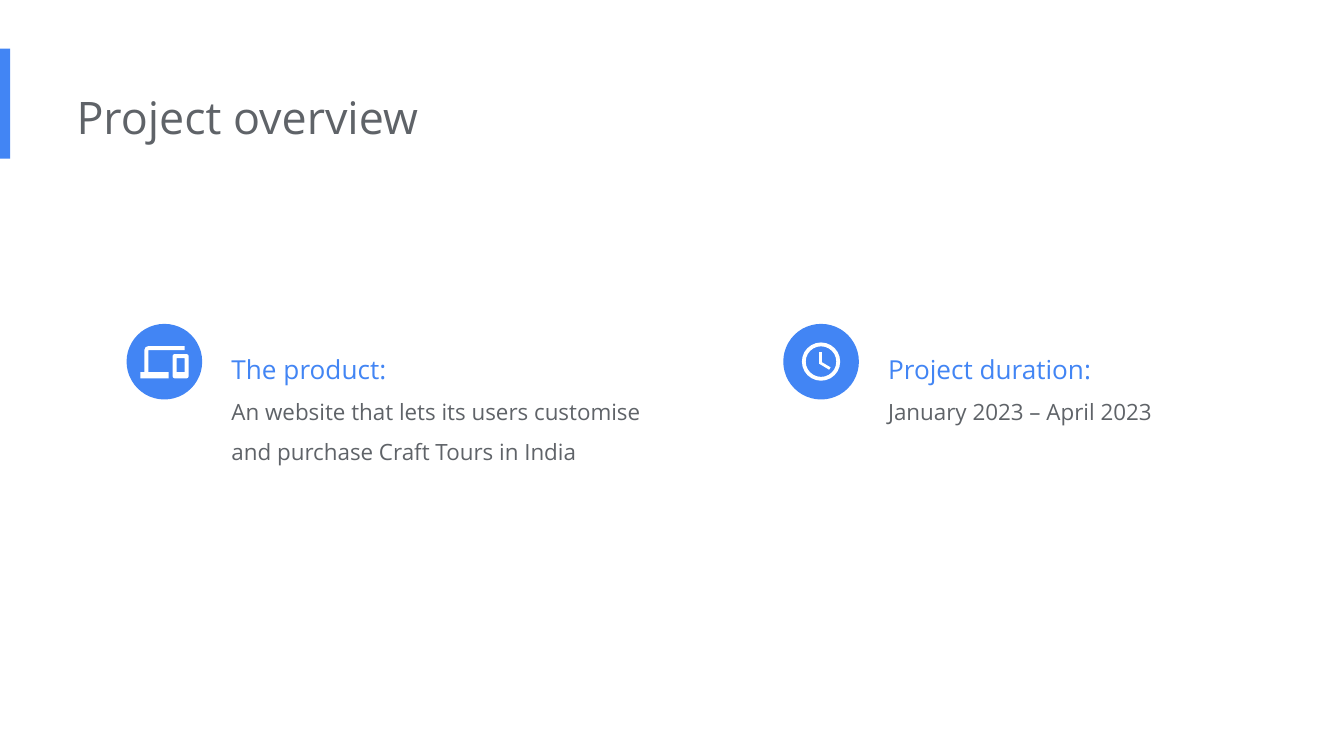
import dataclasses

import pptx
import pptx.dml.color
import pptx.enum.shapes
import pptx.enum.text
import pptx.shapes.autoshape
import pptx.slide
import pptx.text.text
import pptx.util

Pt = pptx.util.Pt
Contour = list[tuple[float, float]]

FONT = "Open Sans"
BLUE = "4285F4"
GRAY = "5F6368"
WHITE = "FFFFFF"
ROW_TOP = 173.5
DISC_SIZE = 40.5
TEXT_OFFSET = 56.2
CLOCK_INSET = 10

# Icon outlines on a 24-unit grid
LAPTOP: Contour = [(4, 6), (22, 6), (22, 4), (4, 4), (2.6, 4.6), (2, 6),
                   (2, 17), (0, 17), (0, 20), (14, 20), (14, 17), (4, 17)]
PHONE: Contour = [(23, 8), (17, 8), (16.3, 8.3), (16, 9), (16, 19),
                  (16.3, 19.7), (17, 20), (23, 20), (23.7, 19.7), (24, 19),
                  (24, 9), (23.7, 8.3)]
PHONE_SCREEN: Contour = [(22, 17), (18, 17), (18, 10), (22, 10)]
CLOCK_HANDS: Contour = [(12.5, 7), (11, 7), (11, 13), (16.25, 16.15),
                        (17, 14.92), (12.5, 12.25)]


@dataclasses.dataclass
class Topic:
    left: float
    heading: str
    body: str
    text_width: float
    text_height: float


@dataclasses.dataclass
class Icon:
    left: float
    top: float
    unit: float
    contours: list[Contour]


TOPICS = [
    Topic(67.8, "The product:",
          "An website that lets its users customise and purchase Craft Tours in India",
          226.8, 105.1),
    Topic(419.6, "Project duration:", "January 2023 – April 2023", 271.4, 61.9),
]
ICONS = [
    Icon(75.2, 181.1, 1.08, [LAPTOP, PHONE, PHONE_SCREEN]),
    Icon(427.5, 181.5, 1.03, [CLOCK_HANDS]),
]


def color(hex_value: str) -> pptx.dml.color.RGBColor:
    return pptx.dml.color.RGBColor.from_string(hex_value)


def paint(shape: pptx.shapes.autoshape.Shape, fill: str) -> None:
    shape.shadow.inherit = False
    shape.fill.solid()
    shape.fill.fore_color.rgb = color(fill)
    shape.line.fill.background()


def add_preset(slide: pptx.slide.Slide, kind: pptx.enum.shapes.MSO_SHAPE,
               left: float, top: float, width: float, height: float,
               fill: str) -> pptx.shapes.autoshape.Shape:
    shape = slide.shapes.add_shape(kind, Pt(left), Pt(top), Pt(width), Pt(height))
    paint(shape, fill)
    return shape


def add_icon(slide: pptx.slide.Slide, icon: Icon) -> None:
    """Draw all contours as one shape, in hundredths of a grid unit."""
    builder = None
    for contour in icon.contours:
        points = [(round(x * 100), round(y * 100)) for x, y in contour]
        if builder is None:
            builder = slide.shapes.build_freeform(*points[0], scale=Pt(icon.unit) / 100)
        else:
            builder.move_to(*points[0])
        builder.add_line_segments(points[1:], close=True)
    paint(builder.convert_to_shape(Pt(icon.left), Pt(icon.top)), WHITE)


def set_frame(frame: pptx.text.text.TextFrame) -> None:
    frame.word_wrap = True
    frame.auto_size = pptx.enum.text.MSO_AUTO_SIZE.SHAPE_TO_FIT_TEXT
    frame.vertical_anchor = pptx.enum.text.MSO_ANCHOR.TOP
    frame.margin_left = Pt(0)
    frame.margin_top = frame.margin_right = frame.margin_bottom = Pt(7.2)


def write(paragraph: pptx.text.text._Paragraph, text: str, size: float,
          text_color: str, line_spacing: float) -> None:
    paragraph.text = text
    paragraph.alignment = pptx.enum.text.PP_ALIGN.LEFT
    paragraph.line_spacing = line_spacing
    paragraph.font.name = FONT
    paragraph.font.size = Pt(size)
    paragraph.font.color.rgb = color(text_color)


def add_title(slide: pptx.slide.Slide, text: str) -> None:
    title = slide.shapes.title
    title.left, title.top, title.width, title.height = Pt(41), Pt(41), Pt(484.6), Pt(43.9)
    set_frame(title.text_frame)
    write(title.text_frame.paragraphs[0], text, 24, GRAY, 1)


def add_topic(slide: pptx.slide.Slide, topic: Topic) -> None:
    box = slide.shapes.add_textbox(Pt(topic.left + TEXT_OFFSET), Pt(ROW_TOP),
                                   Pt(topic.text_width), Pt(topic.text_height))
    set_frame(box.text_frame)
    write(box.text_frame.paragraphs[0], topic.heading, 14, BLUE, 1.5)
    write(box.text_frame.add_paragraph(), topic.body, 12, GRAY, 1.5)
    add_preset(slide, pptx.enum.shapes.MSO_SHAPE.OVAL,
               topic.left, ROW_TOP, DISC_SIZE, DISC_SIZE, BLUE)


def main() -> None:
    presentation = pptx.Presentation()
    presentation.slide_width = Pt(720)
    presentation.slide_height = Pt(405)
    slide = presentation.slides.add_slide(presentation.slide_layouts[5])

    add_preset(slide, pptx.enum.shapes.MSO_SHAPE.RECTANGLE, 0, 26, 5.5, 59, BLUE)
    add_title(slide, "Project overview")
    for topic in TOPICS:
        add_topic(slide, topic)

    clock_size = DISC_SIZE - 2 * CLOCK_INSET
    clock_face = add_preset(slide, pptx.enum.shapes.MSO_SHAPE.DONUT,
                            TOPICS[1].left + CLOCK_INSET, ROW_TOP + CLOCK_INSET,
                            clock_size, clock_size, WHITE)
    clock_face.adjustments[0] = 0.1
    for icon in ICONS:
        add_icon(slide, icon)

    presentation.save("out.pptx")


if __name__ == "__main__":
    main()
